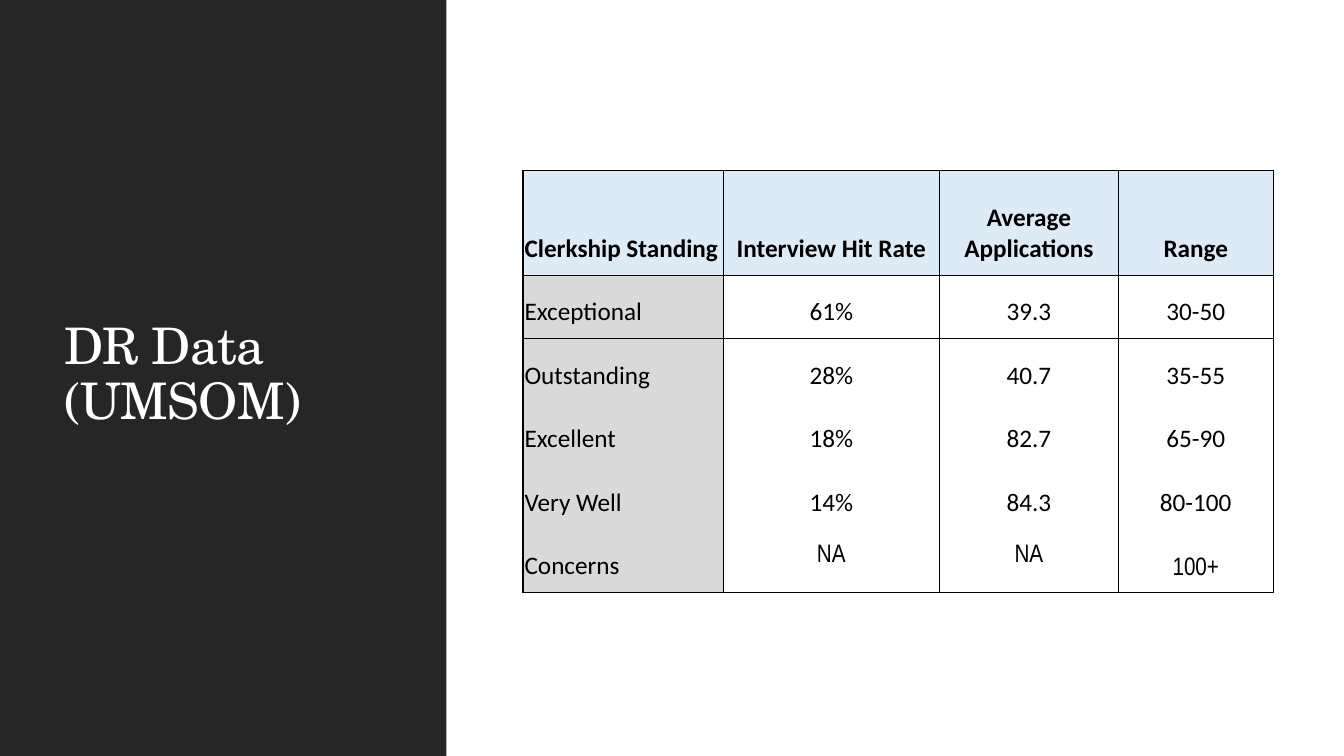
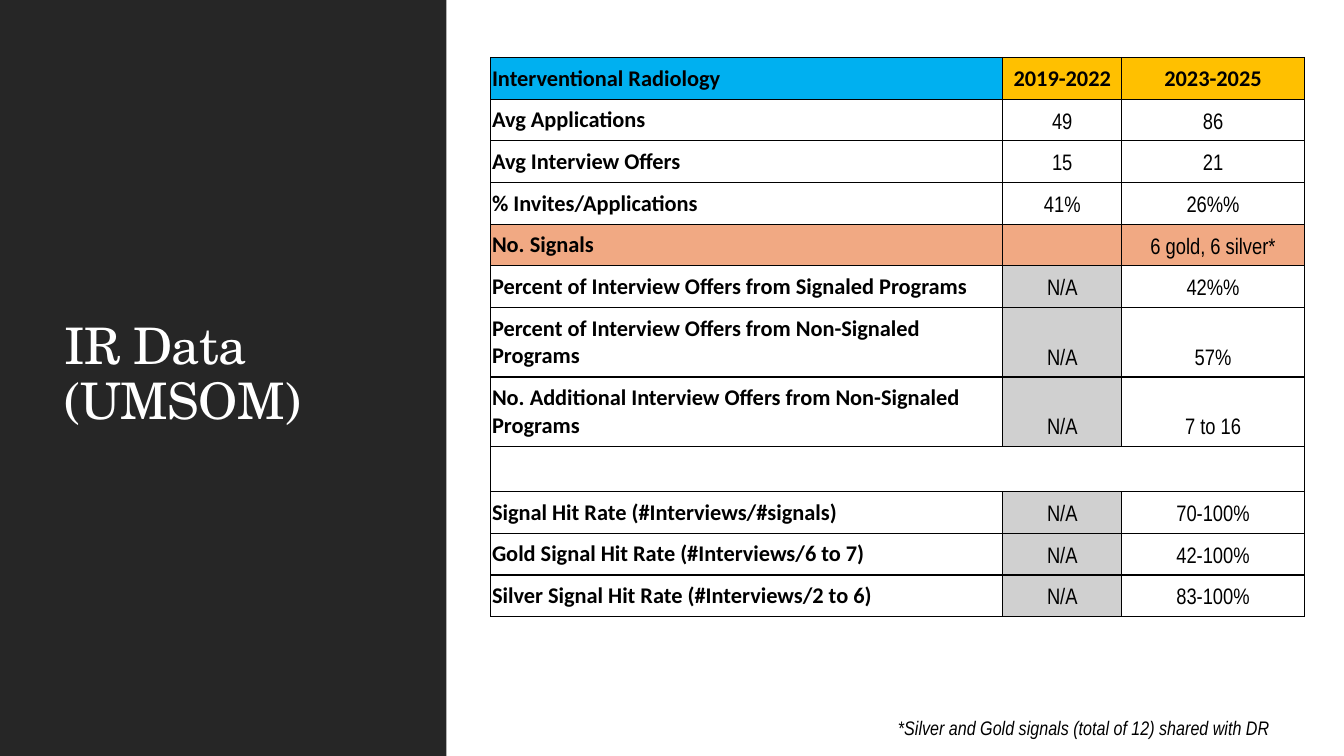
from pptx import Presentation
from pptx.dml.color import RGBColor
from pptx.enum.shapes import MSO_SHAPE
from pptx.enum.text import MSO_ANCHOR, MSO_AUTO_SIZE, PP_ALIGN
from pptx.oxml import parse_xml
from pptx.oxml.ns import nsdecls, qn
from pptx.util import Cm, Pt

RECT = MSO_SHAPE.RECTANGLE
LEFT, CENTER = PP_ALIGN.LEFT, PP_ALIGN.CENTER
MIDDLE, BOTTOM = MSO_ANCHOR.MIDDLE, MSO_ANCHOR.BOTTOM
NO_AUTOFIT = MSO_AUTO_SIZE.NONE

BLACK = RGBColor(0x00, 0x00, 0x00)
WHITE = RGBColor(0xFF, 0xFF, 0xFF)
CHARCOAL = RGBColor(0x26, 0x26, 0x26)
PALE_BLUE = RGBColor(0xDD, 0xEB, 0xF7)
LIGHT_GREY = RGBColor(0xD9, 0xD9, 0xD9)
GREY = RGBColor(0xD0, 0xD0, 0xD0)
BLUE = RGBColor(0x00, 0xB0, 0xF0)
GOLD = RGBColor(0xFF, 0xC0, 0x00)
SALMON = RGBColor(0xF1, 0xA9, 0x83)

SERIF, SANS, NARROW = "TeX Gyre Schola", "Calibri", "Arial Narrow"
PLAIN_STYLE = "{2D5ABB26-0587-4C30-8999-92F81FD0307C}"


def set_borders(cell, widths):
    tcPr = cell._tc.get_or_add_tcPr()
    lines = [
        parse_xml(
            f'<a:{side} {nsdecls("a")} w="{Pt(width)}"><a:solidFill>'
            f'<a:srgbClr val="{BLACK}"/></a:solidFill></a:{side}>'
        )
        for side, width in zip(("lnL", "lnR", "lnT", "lnB"), widths)
        if width
    ]
    for i, line in enumerate(lines):
        tcPr.insert(i, line)


def add_grid(slide, left, top, widths, heights, rows, look, size, margins, v_lines, h_lines):
    frame = slide.shapes.add_table(
        len(heights), len(widths), Cm(left), Cm(top), Cm(sum(widths)), Cm(sum(heights))
    )
    table = frame.table
    table.first_row = table.horz_banding = False
    next(frame.element.iter(qn("a:tableStyleId"))).text = PLAIN_STYLE
    for col, width in zip(table.columns, widths):
        col.width = Cm(width)
    for row, height in zip(table.rows, heights):
        row.height = Cm(height)
    side, foot = margins
    for r, texts in enumerate(rows):
        if len(texts) < len(widths):
            table.cell(r, 0).merge(table.cell(r, len(widths) - 1))
        for c, text in enumerate(texts):
            cell = table.cell(r, c)
            fill, font = look(r, c)
            cell.vertical_anchor = BOTTOM
            cell.margin_left = cell.margin_right = cell.margin_top = Cm(side)
            cell.margin_bottom = Cm(foot)
            if fill is None:
                cell.fill.background()
            else:
                cell.fill.solid()
                cell.fill.fore_color.rgb = fill
            last = c + 1 if len(texts) == len(widths) else len(widths)
            set_borders(cell, (v_lines[c], v_lines[last], h_lines[r], h_lines[r + 1]))
            p = cell.text_frame.paragraphs[0]
            p.alignment = LEFT if c == 0 else CENTER
            if text:
                run = p.add_run()
                run.text = text
                run.font.color.rgb = BLACK
                for key, value in {"size": Pt(size), **font}.items():
                    setattr(run.font, key, value)
    return table


prs = Presentation()
prs.slide_width, prs.slide_height = Cm(33.87), Cm(19.05)
layout = prs.slide_layouts[5]
ph = layout.placeholders[0]
for key, value in {"left": 1.37, "top": 1.45, "width": 8.56, "height": 16.03}.items():
    setattr(ph, key, Cm(value))

slides = []
for title in ("DR Data (UMSOM)", "IR Data (UMSOM)"):
    slide = prs.slides.add_slide(layout)
    tf = slide.shapes.title.text_frame
    for key, value in {"word_wrap": True, "auto_size": NO_AUTOFIT, "vertical_anchor": MIDDLE}.items():
        setattr(tf, key, value)
    p = tf.paragraphs[0]
    p.alignment, p.line_spacing = LEFT, 0.9
    run = p.add_run()
    run.text = title
    run.font.name, run.font.size = SERIF, Pt(36)
    run.font.color.rgb = WHITE
    run.font._element.set("spc", "-50")
    slides.append(slide)
dr_slide, ir_slide = slides

panel = dr_slide.shapes.add_shape(RECT, 0, 0, Cm(11.25), prs.slide_height)
panel.shadow.inherit = False
panel.fill.solid()
panel.fill.fore_color.rgb = CHARCOAL
panel.line.fill.background()
layout.shapes.element.insert(2, panel.element)

dr_rows = [
    ("Clerkship Standing", "Interview Hit Rate", "Average Applications", "Range"),
    ("Exceptional", "61%", "39.3", "30-50"),
    ("Outstanding", "28%", "40.7", "35-55"),
    ("Excellent", "18%", "82.7", "65-90"),
    ("Very Well", "14%", "84.3", "80-100"),
    ("Concerns", "NA", "NA", "100+"),
]


def dr_look(r, c):
    fill = PALE_BLUE if r == 0 else LIGHT_GREY if c == 0 else None
    return fill, {"name": NARROW if r == 5 and c else SANS, "bold": r == 0}


dr_table = add_grid(
    dr_slide, 13.18, 4.29, [5.04, 5.46, 4.5, 3.91], [2.64] + [1.6] * 5, dr_rows, dr_look,
    18, (0.04, 0.28), [1, 0.5, 0.5, 0.5, 1], [1, 0.5, 0, 0, 0, 0, 1],
)
for c in (1, 2):
    dr_table.cell(5, c).vertical_anchor = MIDDLE

ir_rows = [
    ("Interventional Radiology", "2019-2022", "2023-2025"),
    ("Avg Applications", "49", "86"),
    ("Avg Interview Offers", "15", "21"),
    ("% Invites/Applications", "41%", "26%%"),
    ("No. Signals", "", "6 gold, 6 silver*"),
    ("Percent of Interview Offers from Signaled Programs", "N/A", "42%%"),
    ("Percent of Interview Offers from Non-Signaled Programs", "N/A", "57%"),
    ("No. Additional Interview Offers from Non-Signaled Programs", "N/A", "7 to 16"),
    ("",),
    ("Signal Hit Rate (#Interviews/#signals)", "N/A", "70-100%"),
    ("Gold Signal Hit Rate (#Interviews/6 to 7)", "N/A", "42-100%"),
    ("Silver Signal Hit Rate (#Interviews/2 to 6)", "N/A", "83-100%"),
]


def ir_look(r, c):
    fill = None
    if r == 0:
        fill = GOLD if c else BLUE
    elif r == 4:
        fill = SALMON
    elif c == 1 and r > 4:
        fill = GREY
    strong = r == 0 or c == 0
    return fill, {"name": SANS if strong else NARROW, "bold": strong}


add_grid(
    ir_slide, 12.37, 1.45, [12.9, 3, 4.6], [1.05] * 6 + [1.75] * 2 + [1.14] + [1.05] * 3,
    ir_rows, ir_look, 16, (0.03, 0.18), [1] * 4, [1] * 13,
)
add_grid(
    ir_slide, 22.6, 17.48, [11.2], [1.3],
    [("*Silver and Gold signals (total of 12) shared with DR",)],
    lambda r, c: (None, {"name": NARROW, "italic": True}),
    14, (0.03, 0.13), [0, 0], [0, 0],
)

prs.save("out.pptx")
